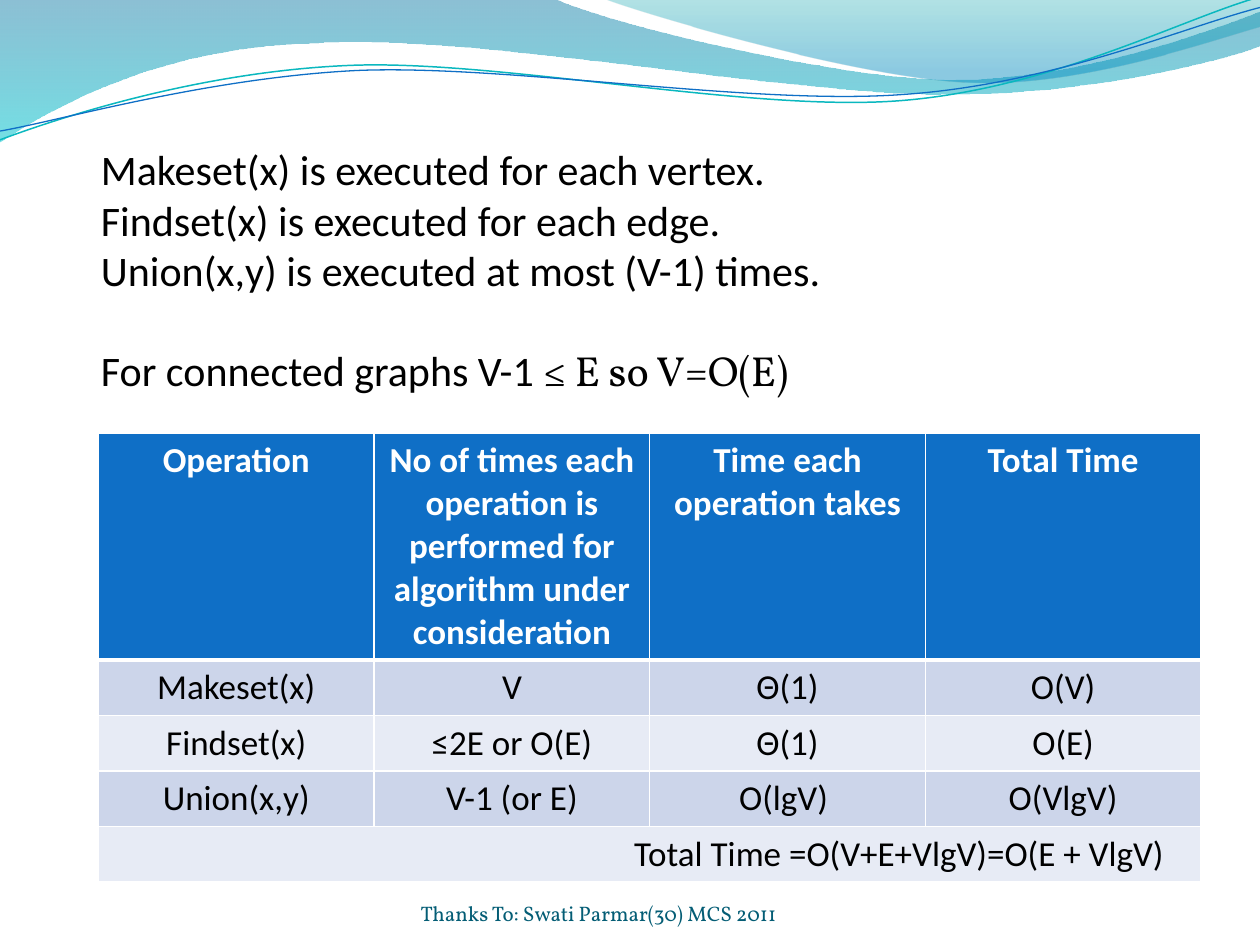
import math
from dataclasses import dataclass

from lxml import etree
from pptx import Presentation
from pptx import util as u
from pptx.dml.color import RGBColor
from pptx.enum import text
from pptx.oxml import ns

Pt = u.Pt
Point = tuple[float, float]

BLACK = RGBColor(0x00, 0x00, 0x00)
WHITE = RGBColor(0xFF, 0xFF, 0xFF)
BLUE = RGBColor(0x0F, 0x6F, 0xC6)
TURQUOISE = RGBColor(0x0A, 0xB8, 0xBF)
BAND_DARK = RGBColor(0xCC, 0xD5, 0xEA)
BAND_LIGHT = RGBColor(0xE7, 0xEB, 0xF5)
FOOTER_TEAL = RGBColor(0x04, 0x5D, 0x75)
WAVE_BLUE = RGBColor(0x00, 0x74, 0xA1)
WAVE_CYAN = RGBColor(0x00, 0xC6, 0xCF)
CREST_GREEN = RGBColor(0x00, 0xA1, 0xA9)
CREST_BLUE = RGBColor(0x00, 0x8B, 0xBF)

BODY_FONT = "Calibri"
SERIF_FONT = "Vollkorn"
LINE_TILT = 2.7  # degrees, anticlockwise


@dataclass(frozen=True)
class Stop:
    position: float
    color: RGBColor
    opacity: int  # percent


@dataclass(frozen=True)
class Outline:
    """Segments hold one point (a line) or three points (a Bezier curve)."""
    start: Point
    segments: list[tuple[Point, ...]]
    stops: tuple[Stop, ...] = ()
    line_color: RGBColor | None = None
    line_width: float = 0
    center: Point = (0, 0)
    tilt: float = 0


@dataclass(frozen=True)
class TableRow:
    cells: tuple[str, ...]
    fill: RGBColor
    height: float = 26.2
    header: bool = False


WAVES = [
    Outline((0, 0), [
        ((316.8, -0.7),),
        ((342.7, 12.2), (478.1, 45.4), (545.8, 45.4)),
        ((614.2, 45.4), (689.8, 18.7), (720, 6.5)),
        ((720.7, 25.9),),
        ((707.8, 31.7), (626.4, 54.7), (537.1, 54)),
        ((447.8, 54), (275, 20.2), (185, 24.5)),
        ((92.9, 25.9), (33.1, 59.8), (-0.7, 81.4)),
        ((0, 0),),
    ], stops=(Stop(0, WAVE_BLUE, 45), Stop(1, WAVE_CYAN, 55))),
    Outline((344.9, -0.7), [
        ((366.5, 7.9), (491, 44.6), (553.7, 46.8)),
        ((616.3, 49.7), (691.9, 23), (720, 15.1)),
        ((720, 0),),
        ((344.9, -0.7),),
    ], stops=(Stop(0, CREST_GREEN, 30), Stop(0.8, CREST_BLUE, 45))),
    Outline((0, 79.9), [
        ((34.6, 67), (113.8, 41), (199.4, 37.4)),
        ((284.4, 33.8), (427, 64.1), (513.4, 57.6)),
        ((599.8, 51.1), (675.4, 10.8), (718.6, -1.4)),
    ], line_color=TURQUOISE, line_width=0.85, center=(359.3, 41.4), tilt=LINE_TILT),
    Outline((0, 74.9), [
        ((33.8, 69.1), (118.1, 44.6), (203.8, 40.3)),
        ((290.2, 36.7), (429.8, 60.5), (516.2, 54)),
        ((601.9, 48.2), (677.5, 15.1), (720, 4.3)),
    ], line_color=BLUE, line_width=0.75, center=(359.6, 42.5), tilt=LINE_TILT),
]

TABLE_ROWS = [
    TableRow(("Operation",
              "No of times each operation is performed for algorithm under consideration",
              "Time each operation takes", "Total Time"), BLUE, 104.4, True),
    TableRow(("Makeset(x)", "V", "Θ(1)", "O(V)"), BAND_DARK),
    TableRow(("Findset(x)", "≤2E or O(E)", "Θ(1)", "O(E)"), BAND_LIGHT),
    TableRow(("Union(x,y)", "V-1 (or E)", "O(lgV) ", "O(VlgV)"), BAND_DARK),
    TableRow(("Total Time =O(V+E+VlgV)=O(E + VlgV)",), BAND_LIGHT),
]


def turn(point: Point, center: Point, degrees: float) -> Point:
    """Turn a point clockwise about a center."""
    x, y = point[0] - center[0], point[1] - center[1]
    cosine, sine = math.cos(math.radians(degrees)), math.sin(math.radians(degrees))
    return center[0] + x * cosine - y * sine, center[1] + x * sine + y * cosine


def bend(shape, segments: list[tuple[Point, ...]]) -> None:
    """Gather the straight steps of each curved segment into one Bezier curve."""
    steps = iter(list(shape.element.iter(ns.qn("a:lnTo"))))
    for segment in segments:
        step = next(steps)
        if len(segment) == 3:
            step.tag = ns.qn("a:cubicBezTo")
            for _ in range(2):
                extra = next(steps)
                step.append(extra[0])
                extra.getparent().remove(extra)


def draw_outline(slide, outline: Outline) -> None:
    points = [outline.start] + [p for segment in outline.segments for p in segment]
    turned = [turn(point, outline.center, outline.tilt) for point in points]
    emu_points = [(Pt(x), Pt(y)) for x, y in turned]
    builder = slide.shapes.build_freeform(*emu_points[0])
    builder.add_line_segments(emu_points[1:], close=bool(outline.stops))
    shape = builder.convert_to_shape()
    bend(shape, outline.segments)
    shape.rotation = -outline.tilt
    shape.shadow.inherit = False
    if outline.stops:
        shape.line.fill.background()
        shape.fill.gradient()
        shape.fill.gradient_angle = 270
        for target, stop in zip(shape.fill.gradient_stops, outline.stops):
            target.position = stop.position
            target.color.rgb = stop.color
        colors = shape.element.spPr.iter(ns.qn("a:srgbClr"))
        for color, stop in zip(colors, outline.stops):
            etree.SubElement(color, ns.qn("a:alpha"), val=str(stop.opacity * 1000))
    else:
        shape.fill.background()
        shape.line.color.rgb = outline.line_color
        shape.line.width = Pt(outline.line_width)


def set_font(font, size: float, name: str, color: RGBColor, bold: bool = False) -> None:
    font.size, font.name, font.bold = Pt(size), name, bold
    font.color.rgb = color


def set_borders(cell, top: float, bottom: float) -> None:
    properties = cell._tc.get_or_add_tcPr()
    for side, width in (("L", 1), ("R", 1), ("T", top), ("B", bottom)):
        line = etree.SubElement(properties, ns.qn(f"a:ln{side}"), w=str(Pt(width)))
        fill = etree.SubElement(line, ns.qn("a:solidFill"))
        etree.SubElement(fill, ns.qn("a:srgbClr"), val=str(WHITE))


def draw_table(slide, rows: list[TableRow], columns: int = 4) -> None:
    frame = slide.shapes.add_table(len(rows), columns, Pt(56.3), Pt(247.5), Pt(630), Pt(280.8))
    table = frame.table
    for index, row in enumerate(rows):
        table.rows[index].height = Pt(row.height)
        for cell in table.rows[index].cells:
            set_borders(cell, 3 if index == 1 else 1, 3 if row.header else 1)
            cell.fill.solid()
            cell.fill.fore_color.rgb = row.fill
        for column, wording in enumerate(row.cells):
            cell = table.cell(index, column)
            cell.text = wording
            paragraph = cell.text_frame.paragraphs[0]
            paragraph.alignment = text.PP_ALIGN.CENTER
            set_font(paragraph.font, 20, BODY_FONT, WHITE if row.header else BLACK, row.header)
    frame.height = Pt(280.8)

    # The total spans the whole last row
    total = table.cell(len(rows) - 1, 0)
    total.merge(table.cell(len(rows) - 1, columns - 1))
    total.margin_right = Pt(21)
    total.text_frame.paragraphs[0].alignment = text.PP_ALIGN.RIGHT


def add_text_frame(slide, left: float, top: float, width: float, height: float):
    frame = slide.shapes.add_textbox(Pt(left), Pt(top), Pt(width), Pt(height)).text_frame
    frame.word_wrap = True
    return frame


def main() -> None:
    presentation = Presentation()
    presentation.slide_width, presentation.slide_height = Pt(720), Pt(540)
    slide = presentation.slides.add_slide(presentation.slide_layouts[6])

    # Waves along the top
    for outline in WAVES:
        draw_outline(slide, outline)
    # Running times
    draw_table(slide, TABLE_ROWS)

    # Footer
    footer = add_text_frame(slide, 210, 500.4, 264.2, 28.8)
    footer.margin_left = footer.margin_right = footer.margin_top = footer.margin_bottom = 0
    footer.vertical_anchor = text.MSO_ANCHOR.BOTTOM
    footer.text = "Thanks To: Swati Parmar(30) MCS 2011"
    footer.paragraphs[0].alignment = text.PP_ALIGN.CENTER
    set_font(footer.paragraphs[0].font, 12, SERIF_FONT, FOOTER_TEAL)

    # Statements above the table
    statements = add_text_frame(slide, 50.6, 78.7, 641.5, 174.2)
    statements.text = "\n".join(("Makeset(x) is executed for each vertex.",
                                 "Findset(x) is executed for each edge.",
                                 "Union(x,y) is executed at most (V-1) times.",
                                 "For connected graphs V-1 "))
    for paragraph in statements.paragraphs:
        set_font(paragraph.font, 24, BODY_FONT, BLACK)
    conclusion = statements.paragraphs[-1]
    conclusion.space_before = Pt(28.5)
    run = conclusion.add_run()
    run.text = "≤ E so V=O(E)"
    run.font.name = SERIF_FONT

    presentation.save("out.pptx")


if __name__ == "__main__":
    main()
